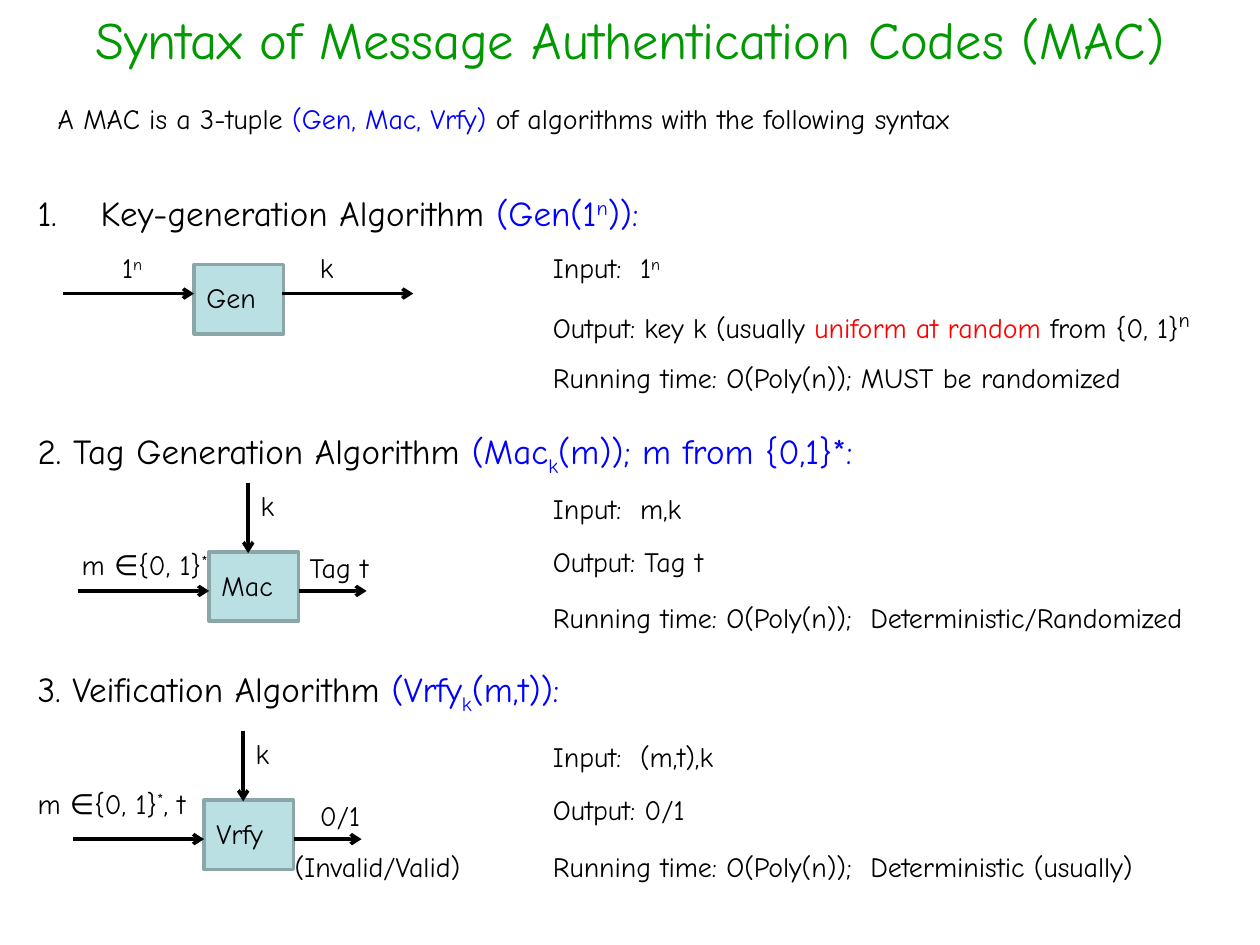
from lxml.etree import SubElement
from pptx import Presentation
from pptx.dml.color import RGBColor
from pptx.enum.shapes import MSO_CONNECTOR, MSO_SHAPE
from pptx.enum.text import MSO_AUTO_SIZE, PP_ALIGN
from pptx.oxml.ns import qn
from pptx.util import Pt

PX = 9144
FONT = "Comic Neue"
BLACK, BLUE, RED, GREEN = "000000", "0000FF", "FF0000", "009900"
SUP, SUB = 30, -25
DETAIL_X = 429


def px(n):
    return n * PX


def rgb(value):
    return RGBColor.from_string(value)


def add_run(p, text, size, color=BLACK, base=0):
    r = p.add_run()
    r.text = text
    r.font.name = FONT
    r.font.size = Pt(size)
    r.font.color.rgb = rgb(color)
    if base:
        r.font._element.set("baseline", str(base * 1000))


def add_text(s, x, y, w, runs, h=37, size=16, align=PP_ALIGN.LEFT):
    sp = s.shapes.add_textbox(px(x), px(y), px(w), px(h))
    tf = sp.text_frame
    tf.word_wrap = True
    tf.auto_size = MSO_AUTO_SIZE.SHAPE_TO_FIT_TEXT
    p = tf.paragraphs[0]
    p.alignment = align
    for text, *style in runs:
        if len(style) == 3:
            color, base, run_size = style
            add_run(p, text, run_size, color, base)
        else:
            add_run(p, text, size, *style)
    return p


def add_heading(s, y, runs, numbered=False):
    p = add_text(s, 20, y, 929, runs, h=44, size=20)
    if numbered:
        pPr = p._p.get_or_add_pPr()
        pPr.set("marL", str(px(50)))
        pPr.set("indent", str(px(-50)))
        SubElement(pPr, qn("a:buFont"), typeface=FONT)
        SubElement(pPr, qn("a:buAutoNum"), type="arabicPeriod")


def add_box(s, x, y, name):
    sp = s.shapes.add_shape(MSO_SHAPE.RECTANGLE, px(x), px(y), px(71), px(55))
    sp.shadow.inherit = False
    sp.fill.solid()
    sp.fill.fore_color.rgb = rgb("BBE0E3")
    sp.line.color.rgb = rgb("8AA6A8")
    sp.line.width = Pt(2)
    add_text(s, x, y + 8, 86, [(name,)])


def add_arrow(s, x1, y1, x2, y2):
    c = s.shapes.add_connector(MSO_CONNECTOR.STRAIGHT, px(x1), px(y1), px(x2), px(y2))
    c.line.color.rgb = rgb(BLACK)
    c.line.width = Pt(2)
    SubElement(c.line._get_or_add_ln(), qn("a:tailEnd"), type="arrow")
    SubElement(c._element.spPr, qn("a:effectLst"))


def add_details(s, rows):
    for y, width, runs in rows:
        add_text(s, DETAIL_X, y, width, runs)


def add_keyed_box(s, x, y, name):
    add_box(s, x, y, name)
    add_arrow(s, x - 104, y + 31, x, y + 31)
    add_arrow(s, x + 71, y + 31, x + 125, y + 31)
    add_arrow(s, x + 31, y - 55, x + 31, y + 1)
    add_text(s, x + 31, y - 55, 51, [("k",)])


def add_key_generation(s):
    add_heading(s, 147, [("Key-generation Algorithm ",), ("(Gen(1", BLUE),
                         ("n", BLUE, SUP), (")):", BLUE)], numbered=True)
    add_box(s, 154, 210, "Gen")
    add_arrow(s, 50, 233, 154, 233)
    add_arrow(s, 224, 233, 328, 233)
    add_text(s, 87, 194, 51, [("1",), ("n", BLACK, SUP)])
    add_text(s, 244, 194, 51, [("k",)])
    add_details(s, [
        (194, 283, [("Input:  1",), ("n", BLACK, SUP)]),
        (236, 610, [("Output: key k (usually ",), ("uniform at random ", RED),
                    ("from {0, 1}",), ("n", BLACK, SUP, 20)]),
        (281, 590, [("Running time: O(Poly(n)); MUST be randomized",)]),
    ])


def add_tag_generation(s):
    add_heading(s, 336, [("2. Tag Generation Algorithm ",), ("(Mac", BLUE),
                         ("k", BLUE, SUB), ("(m)); m from {0,1}*:", BLUE)])
    add_keyed_box(s, 166, 438, "Mac")
    add_text(s, 55, 430, 126, [("m ∈{0, 1}",), ("*", BLACK, SUP)])
    add_text(s, 236, 432, 161, [("Tag t",)])
    add_details(s, [
        (385, 283, [("Input:  m,k",)]),
        (427, 610, [("Output: Tag t",)]),
        (472, 590, [("Running time: O(Poly(n));  Deterministic/Randomized",)]),
    ])


def add_verification(s):
    add_heading(s, 525, [("3. Veification Algorithm ",), ("(Vrfy", BLUE),
                         ("k", BLUE, SUB), ("(m,t)):", BLUE)])
    add_keyed_box(s, 162, 635, "Vrfy")
    add_text(s, 20, 619, 142, [("m ∈{0, 1}",), ("*", BLACK, SUP), (", t",)])
    add_text(s, 244, 629, 161, [("0/1",)])
    add_text(s, 224, 669, 181, [("(Invalid/Valid)",)])
    add_details(s, [
        (582, 283, [("Input:  (m,t),k",)]),
        (624, 610, [("Output: 0/1",)]),
        (669, 590, [("Running time: O(Poly(n));  Deterministic (usually)",)]),
    ])


def main():
    prs = Presentation()
    prs.slide_width, prs.slide_height = px(1000), px(750)
    s = prs.slides.add_slide(prs.slide_layouts[6])
    add_text(s, 0, 1, 1000, [("Syntax of Message Authentication Codes (MAC)", GREEN)],
             h=51, size=30, align=PP_ALIGN.CENTER)
    add_text(s, 36, 76, 842, [("A MAC is a 3-tuple ",), ("(Gen, Mac, Vrfy) ", BLUE),
                              ("of algorithms with the following syntax",)])
    add_key_generation(s)
    add_tag_generation(s)
    add_verification(s)
    prs.save("out.pptx")


if __name__ == "__main__":
    main()
